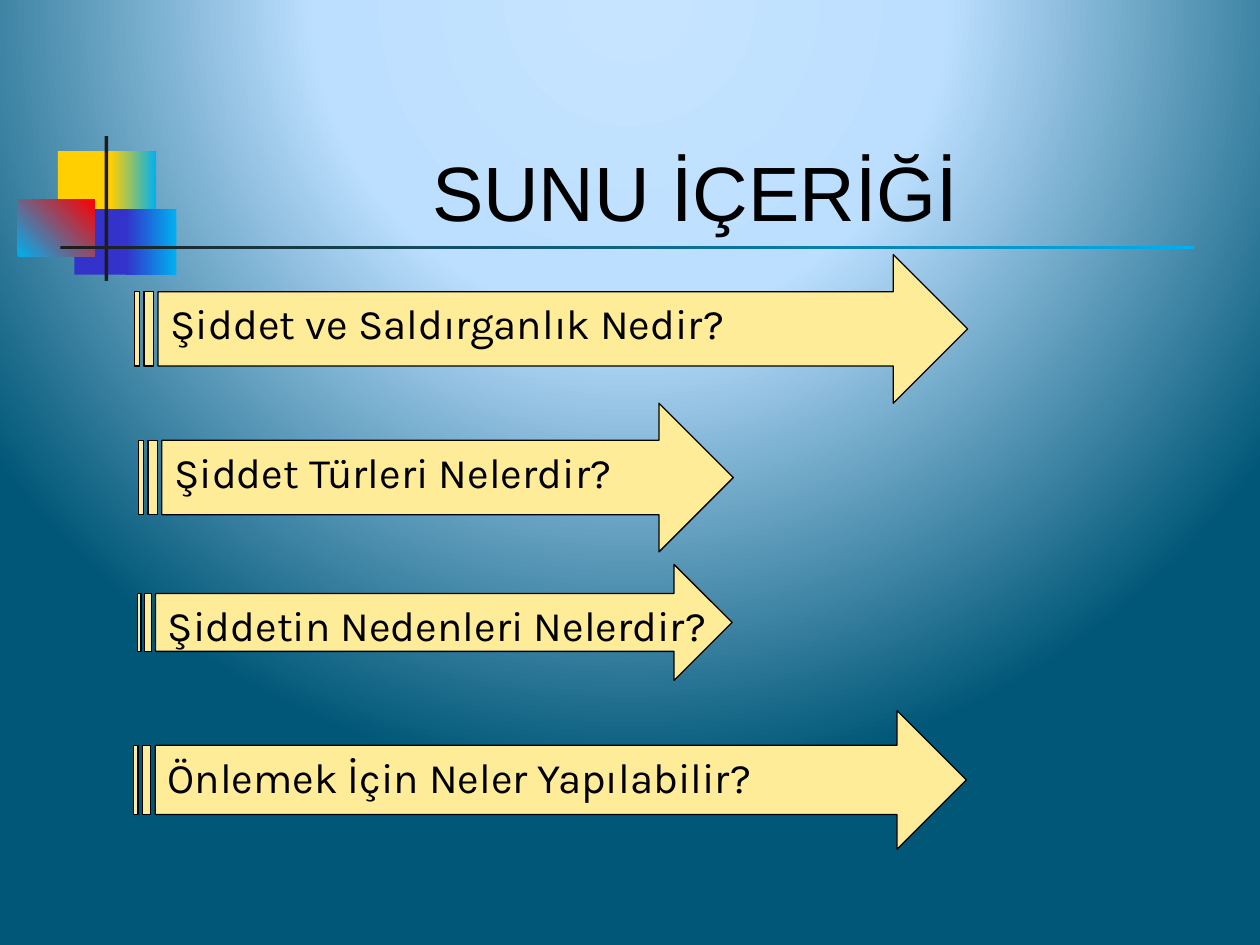
from lxml import etree
from pptx import Presentation
from pptx.dml.color import RGBColor
from pptx.enum import shapes, text
from pptx.oxml import ns
from pptx.util import Inches, Pt

BLACK = RGBColor(0, 0, 0)
DARK = RGBColor(0x1C, 0x1C, 0x1C)
GOLD = RGBColor(0xFF, 0xCF, 0x01)
BLUE = RGBColor(0x33, 0x33, 0xCC)
SKY = RGBColor(0x00, 0xB0, 0xF0)
RED = RGBColor(0xFF, 0, 0)
CREAM = RGBColor(0xFF, 0xEC, 0x99)
PALE = RGBColor(0xC6, 0xE4, 0xFF)
LIGHT = RGBColor(0xBC, 0xDF, 0xFF)
DEEP = RGBColor(0x00, 0x57, 0x77)

BLOCKS = [
    (0.46, 1.2, 0.48, 0.52, [GOLD], 0),
    (0.88, 1.2, 0.36, 0.52, [GOLD, SKY], 0),
    (0.59, 1.66, 0.46, 0.52, [BLUE], 0),
    (1, 1.66, 0.4, 0.52, [BLUE, SKY], 0),
    (0.14, 1.58, 0.61, 0.46, [SKY, RED], 315),
    (0.83, 1.08, 0.03, 1.15, [DARK], 0),
    (0.48, 1.95, 9, 0.03, [DARK, SKY], 0),
]
ARROWS = [
    (1.07, 2.02, 6.61, 1.18, "Şiddet ve Saldırganlık Nedir?"),
    (1.1, 3.2, 4.72, 1.18, "Şiddet Türleri Nelerdir?"),
    (1.09, 4.48, 4.72, 0.92, "Şiddetin Nedenleri Nelerdir?"),
    (1.06, 5.64, 6.61, 1.1, "Önlemek İçin Neler Yapılabilir?"),
]


def node(root, tag, **attrs):
    item = etree.SubElement(root, ns.qn(tag))
    for key, value in attrs.items():
        item.set(key, str(value))
    return item


def blend(fill, root, stops):
    fill.gradient()
    grad = root.find(".//" + ns.qn("a:gradFill"))
    for child in list(grad):
        grad.remove(child)
    chain = node(grad, "a:gsLst")
    for place, color in stops:
        stop = node(chain, "a:gs", pos=place * 1000)
        node(stop, "a:srgbClr", val=color)
    return grad


def write(frame, words, size=24, font="Karla", color=BLACK,
          align=text.PP_ALIGN.LEFT, anchor=text.MSO_ANCHOR.TOP, wrap=False):
    frame.word_wrap = wrap
    frame.vertical_anchor = anchor
    para = frame.paragraphs[0]
    para.alignment = align
    run = para.add_run()
    run.text = words
    run.font.size = Pt(size)
    run.font.name = font
    run.font.color.rgb = color


def draw(slide, kind, *box):
    shape = slide.shapes.add_shape(kind, *map(Inches, box))
    shape.shadow.inherit = False
    return shape


def block(slide, x, y, w, h, colors, angle):
    shape = draw(slide, shapes.MSO_SHAPE.RECTANGLE, x, y, w, h)
    shape.line.fill.background()
    if len(colors) == 1:
        shape.fill.solid()
        shape.fill.fore_color.rgb = colors[0]
    else:
        grad = blend(shape.fill, shape.element, zip((0, 100), colors))
        node(grad, "a:lin", ang=angle * 60000, scaled=0)


def arrow(slide, x, y, w, h, words):
    shape = draw(slide, shapes.MSO_SHAPE.STRIPED_RIGHT_ARROW, x, y, w, h)
    shape.fill.solid()
    shape.fill.fore_color.rgb = CREAM
    shape.line.color.rgb = BLACK
    shape.line.width = Pt(0.75)
    write(shape.text_frame, words)


def backdrop(slide):
    grad = blend(slide.background.fill, slide.element,
                 [(0, PALE), (40, LIGHT), (100, DEEP)])
    way = node(grad, "a:path", path="circle")
    node(way, "a:fillToRect", l=50000, t=-80000, r=50000, b=180000)


def heading(slide, words):
    title = slide.shapes.title
    title.left, title.top = Inches(1.26), Inches(0.68)
    title.width, title.height = Inches(8.52), Inches(1.25)
    write(title.text_frame, words, size=44, font="Arial", wrap=True,
          align=text.PP_ALIGN.CENTER, anchor=text.MSO_ANCHOR.BOTTOM)


def main():
    deck = Presentation()
    deck.slide_width, deck.slide_height = Inches(10), Inches(7.5)
    slide = deck.slides.add_slide(deck.slide_layouts[5])
    backdrop(slide)
    for item in BLOCKS:
        block(slide, *item)
    heading(slide, "SUNU İÇERİĞİ")
    for item in ARROWS:
        arrow(slide, *item)
    deck.save("out.pptx")


if __name__ == "__main__":
    main()
